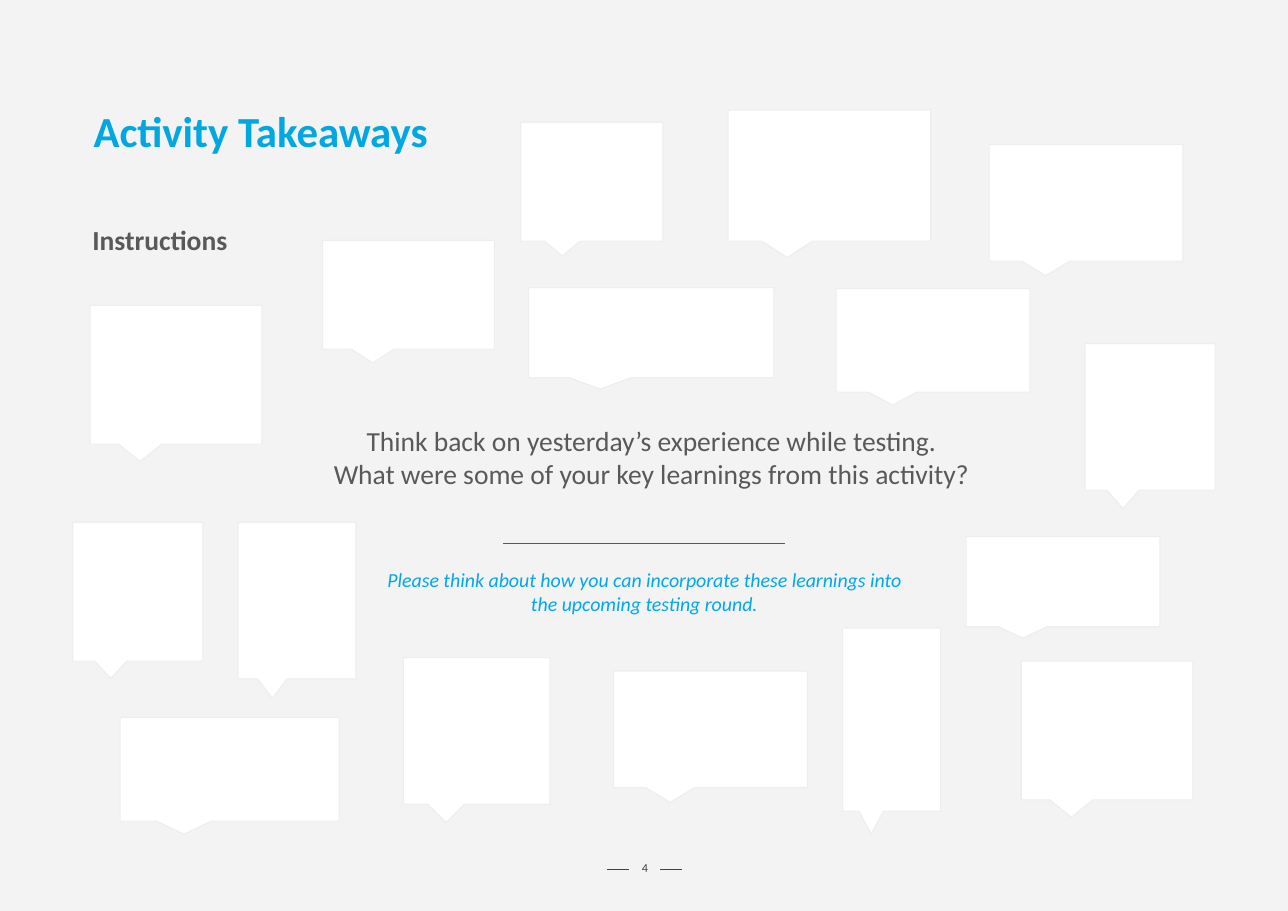
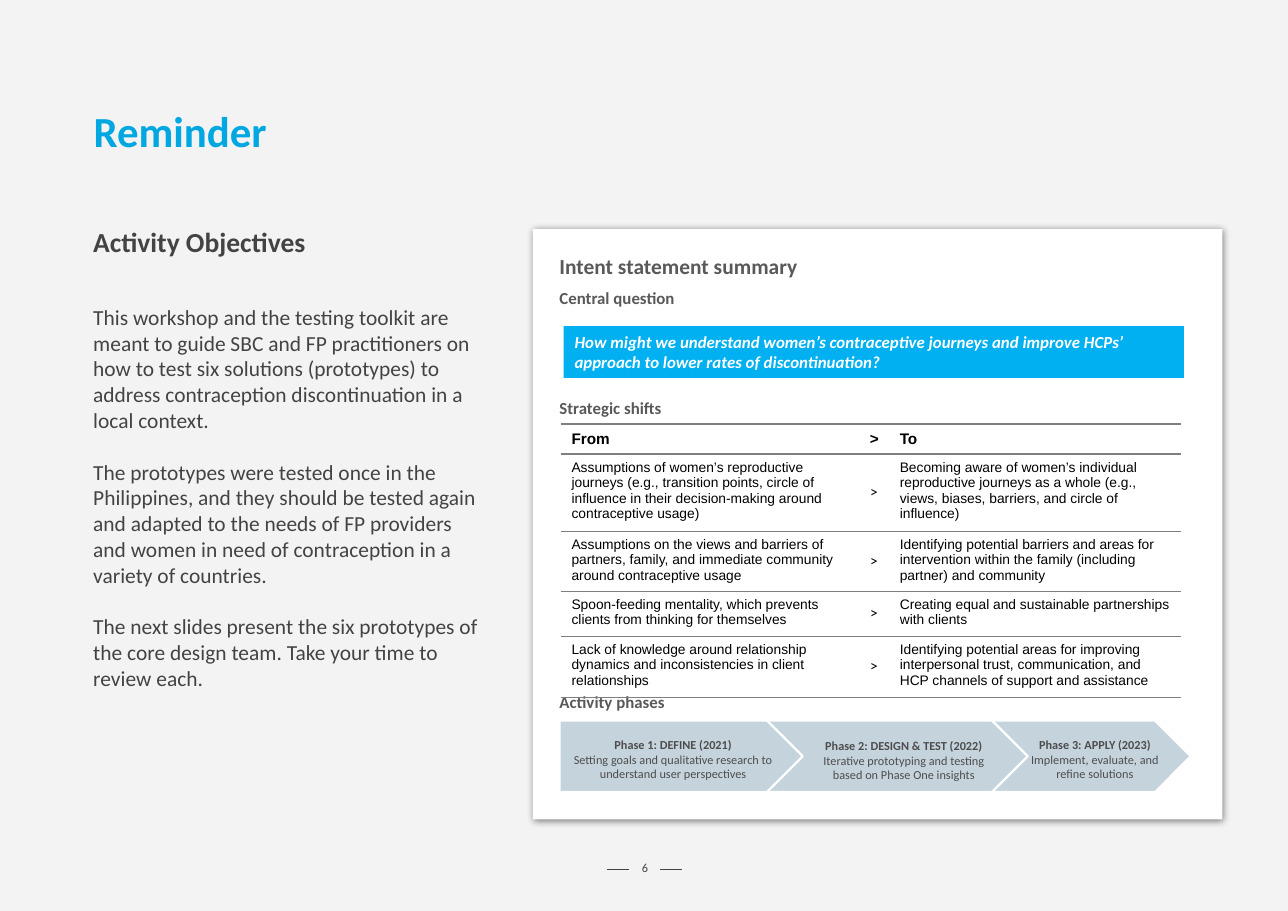
from lxml import etree
from pptx import Presentation
from pptx import util as u
from pptx.dml.color import RGBColor
from pptx.enum import shapes, text
from pptx.oxml import parse_xml
from pptx.oxml.ns import nsdecls, qn

PAPER = RGBColor(0xF3, 0xF3, 0xF3)
WHITE = RGBColor(0xFF, 0xFF, 0xFF)
BLACK = RGBColor(0x00, 0x00, 0x00)
INK = RGBColor(0x43, 0x43, 0x43)
GREY = RGBColor(0x59, 0x59, 0x59)
PHASE_INK = RGBColor(0x4D, 0x4D, 0x4D)
TITLE_BLUE = RGBColor(0x00, 0xA7, 0xE1)
HINT_BLUE = RGBColor(0x00, 0xA7, 0xF1)
BANNER_BLUE = RGBColor(0x00, 0xB0, 0xF0)
PHASE_FILL = RGBColor(0xC5, 0xD3, 0xDC)
CALLOUT_LINE = RGBColor(0xEE, 0xEE, 0xEE)
RULE_GREY = RGBColor(0x7F, 0x7F, 0x7F)

LEFT, CENTER = text.PP_ALIGN.LEFT, text.PP_ALIGN.CENTER
TOP, MIDDLE = text.MSO_ANCHOR.TOP, text.MSO_ANCHOR.MIDDLE
TITLE_ONLY = 5


def write(frame, words, size=11, color=GREY, bold=False, italic=False,
          font="Calibri", align=LEFT, spacing=1.0, before=0):
    """Fill the empty first paragraph of the frame, or add one below."""
    paragraph = frame.add_paragraph() if frame.text else frame.paragraphs[0]
    paragraph.text = words
    paragraph.alignment = align
    paragraph.line_spacing = spacing
    paragraph.space_before = u.Pt(before)
    paragraph.font.name = font
    paragraph.font.size = u.Pt(size)
    paragraph.font.bold = bold
    paragraph.font.italic = italic
    paragraph.font.color.rgb = color


def set_frame(frame, inset=(0.25, 0.25), anchor=TOP):
    frame.word_wrap = True
    frame.auto_size = text.MSO_AUTO_SIZE.NONE
    frame.vertical_anchor = anchor
    frame.margin_left = frame.margin_right = u.Cm(inset[0])
    frame.margin_top = frame.margin_bottom = u.Cm(inset[1])


def set_borders(cell, top, bottom):
    """Rule the cell above and below, in points, with open sides."""
    properties = cell._tc.get_or_add_tcPr()
    for index, (side, width) in enumerate(
            (("L", 0), ("R", 0), ("T", top), ("B", bottom))):
        paint = (f'<a:solidFill><a:srgbClr val="{RULE_GREY}"/></a:solidFill>'
                 if width else "<a:noFill/>")
        properties.insert(index, parse_xml(
            f'<a:ln{side} {nsdecls("a")} w="{u.Pt(width)}">{paint}</a:ln{side}>'))


class Deck:
    """Holds the presentation, its shared style and the current slide."""

    def __init__(self):
        self.presentation = Presentation()
        self.presentation.slide_width = u.Cm(29.7)
        self.presentation.slide_height = u.Cm(21)
        background = self.presentation.slide_master.background.fill
        background.solid()
        background.fore_color.rgb = PAPER

    def add_slide(self, title, number):
        layout = self.presentation.slide_layouts[TITLE_ONLY]
        self.slide = self.presentation.slides.add_slide(layout)
        placeholder = self.slide.shapes.title
        placeholder.left, placeholder.top = u.Cm(1.88), u.Cm(2.11)
        placeholder.width, placeholder.height = u.Cm(21.97), u.Cm(1.96)
        set_frame(placeholder.text_frame, (0.28, 0.15), MIDDLE)
        write(placeholder.text_frame, title, size=28, color=TITLE_BLUE,
              bold=True, spacing=0.86)
        self.add_text((14.43, 19.71, 0.89, 0.66), str(number), anchor=MIDDLE,
                      size=8, color=INK, align=CENTER, spacing=0.8)
        for left in (14, 15.22):
            self.add_line(left, 20.04, 0.51, INK)

    def add_text(self, box, *paragraphs, inset=(0.25, 0.25), anchor=TOP, **style):
        frame = self.slide.shapes.add_textbox(*map(u.Cm, box)).text_frame
        set_frame(frame, inset, anchor)
        for words in paragraphs:
            write(frame, words, **style)
        return frame

    def add_line(self, left, top, width, color):
        line = self.slide.shapes.add_connector(
            shapes.MSO_CONNECTOR.STRAIGHT,
            u.Cm(left), u.Cm(top), u.Cm(left + width), u.Cm(top))
        line.line.color.rgb = color
        line.line.width = u.Pt(0.75)
        etree.SubElement(line._element.spPr, qn("a:effectLst"))

    def add_shape(self, kind, box, fill, outline=None, width=0.75, adjustments=()):
        shape = self.slide.shapes.add_shape(kind, *map(u.Cm, box))
        shape.shadow.inherit = False
        shape.fill.solid()
        shape.fill.fore_color.rgb = fill
        if outline is None:
            shape.line.fill.background()
        else:
            shape.line.color.rgb = outline
            shape.line.width = u.Pt(width)
        for index, value in enumerate(adjustments):
            shape.adjustments[index] = value
        return shape

    def add_callout(self, box):
        self.add_shape(shapes.MSO_SHAPE.ROUNDED_RECTANGULAR_CALLOUT, box, WHITE,
                       CALLOUT_LINE, adjustments=(-0.208, 0.625, 0))

    def add_card(self, box):
        """Add a white panel with a soft shadow."""
        card = self.add_shape(shapes.MSO_SHAPE.RECTANGLE, box, WHITE)
        effects = card._element.spPr.find(qn("a:effectLst"))
        effects.append(parse_xml(
            f'<a:outerShdw {nsdecls("a")} blurRad="{u.Pt(4.5)}" dist="{u.Pt(1.5)}" '
            f'dir="{44 * 60000}" algn="tl" rotWithShape="0"><a:srgbClr val="{BLACK}">'
            '<a:alpha val="49000"/></a:srgbClr></a:outerShdw>'))

    def add_banner(self, box, words):
        banner = self.add_shape(shapes.MSO_SHAPE.RECTANGLE, box, BANNER_BLUE)
        set_frame(banner.text_frame, (0.25, 0.13))
        write(banner.text_frame, words, color=WHITE, bold=True, italic=True)

    def add_phase(self, arrow_box, text_box, name, goal):
        self.add_shape(shapes.MSO_SHAPE.PENTAGON, arrow_box, PHASE_FILL, WHITE, 1.5)
        style = dict(size=8, color=PHASE_INK, align=CENTER)
        frame = self.add_text(text_box, name, inset=(0, 0), bold=True,
                              spacing=1.62, **style)
        write(frame, goal, **style)

    def add_shift_table(self, left, top, widths, heights, shifts):
        rows = [("From", "To"), *shifts]
        table = self.slide.shapes.add_table(
            len(rows), len(widths), u.Cm(left), u.Cm(top),
            u.Cm(sum(widths)), u.Cm(sum(heights))).table
        table.first_row = table.horz_banding = False
        for column, width in zip(table.columns, widths):
            column.width = u.Cm(width)
        for index, (origin, target) in enumerate(rows):
            table.rows[index].height = u.Cm(heights[index])
            header = index == 0
            for column, words in enumerate((origin, ">", target)):
                cell = table.cell(index, column)
                arrow = column == 1
                cell.fill.background()
                cell.margin_left = cell.margin_right = u.Cm(0.25)
                cell.margin_top = cell.margin_bottom = u.Cm(0.13)
                cell.vertical_anchor = MIDDLE if header or arrow else TOP
                set_borders(cell, 1.5 if index < 2 else 0.75,
                            1.5 if header else 0.75)
                write(cell.text_frame, words, size=10 if header or arrow else 9,
                      color=BLACK, bold=header, align=CENTER if arrow else LEFT,
                      font="Calibri" if arrow and not header else "Arial")


CALLOUTS = (
    (2.08, 7.04, 3.96, 3.2), (1.68, 12.04, 3, 3.2),
    (2.77, 16.54, 5.05, 2.39), (5.49, 12.04, 2.72, 3.61),
    (7.44, 5.54, 3.96, 2.51), (12.01, 2.82, 3.28, 2.74),
    (9.3, 15.16, 3.38, 3.38), (16.79, 2.54, 4.67, 3.02),
    (22.81, 3.33, 4.47, 2.69), (14.15, 15.47, 4.47, 2.69),
    (19.43, 14.48, 2.26, 4.22), (12.19, 6.63, 5.66, 2.08),
    (19.28, 6.65, 4.47, 2.39), (22.28, 12.37, 4.47, 2.08),
    (25.02, 7.92, 3, 3.38), (23.55, 15.24, 3.96, 3.2),
)

OBJECTIVES = (
    "This workshop and the testing toolkit are meant to guide SBC and FP "
    "practitioners on how to test six solutions (prototypes) to address "
    "contraception discontinuation in a local context.",
    "The prototypes were tested once in the Philippines, and they should be "
    "tested again and adapted to the needs of FP providers and women in need of "
    "contraception in a variety of countries.",
    "The next slides present the six prototypes of the core design team. Take "
    "your time to review each.",
)

SHIFTS = (
    ("Assumptions of women’s reproductive journeys (e.g., transition points, "
     "circle of influence in their decision-making around contraceptive usage)",
     "Becoming aware of women’s individual reproductive journeys as a whole "
     "(e.g., views, biases, barriers, and circle of influence)"),
    ("Assumptions on the views and barriers of partners, family, and immediate "
     "community around contraceptive usage",
     "Identifying potential barriers and areas for intervention within the "
     "family (including partner) and community"),
    ("Spoon-feeding mentality, which prevents clients from thinking for themselves",
     "Creating equal and sustainable partnerships with clients"),
    ("Lack of knowledge around relationship dynamics and inconsistencies in "
     "client relationships",
     "Identifying potential areas for improving interpersonal trust, "
     "communication, and HCP channels of support and assistance"),
)

# Last phase first, so that each arrow overlaps the one that follows it.
PHASES = (
    ((22.43, 16.61, 5.03, 1.65), (23.75, 16.79, 3, 1.63),
     "Phase 3: APPLY (2023)", "Implement, evaluate, and refine solutions"),
    ((17.68, 16.61, 6.02, 1.65), (18.75, 16.81, 4.19, 0.97),
     "Phase 2: DESIGN & TEST (2022)",
     "Iterative prototyping and testing based on Phase One insights"),
    ((12.9, 16.61, 5.61, 1.65), (13.11, 16.79, 4.83, 1.14),
     "Phase 1: DEFINE (2021)",
     "Setting goals and qualitative research to understand user perspectives"),
)


def build_takeaways(deck):
    deck.add_slide("Activity Takeaways", 4)
    deck.add_text((6.12, 9.5, 17.81, 2.13),
                  "Think back on yesterday’s experience while testing.",
                  "What were some of your key learnings from this activity?",
                  inset=(0.28, 0.28), size=18, align=CENTER)
    deck.add_text((8.43, 12.8, 12.85, 1.7),
                  "Please think about how you can incorporate these learnings "
                  "into the upcoming testing round.",
                  inset=(0.28, 0.28), size=13, color=HINT_BLUE, italic=True,
                  align=CENTER)
    deck.add_line(11.61, 12.52, 6.48, GREY)
    deck.add_text((1.88, 4.9, 15.24, 1.32), "Instructions", size=18, bold=True)
    for box in CALLOUTS:
        deck.add_callout(box)


def build_reminder(deck):
    deck.add_slide("Reminder", 6)
    deck.add_text((1.9, 4.93, 10, 1.32), "Activity Objectives",
                  size=18, color=INK, bold=True)
    deck.add_text((1.9, 6.76, 9.63, 10.03), *OBJECTIVES,
                  size=14, color=INK, before=17)
    deck.add_card((12.29, 5.28, 15.9, 13.61))
    for top, size, heading in ((5.61, 14, "Intent statement summary"),
                               (6.4, 11, "Central question"),
                               (8.94, 11, "Strategic shifts"),
                               (15.72, 11, "Activity phases")):
        deck.add_text((12.67, top, 7.57, 0.84), heading, inset=(0.23, 0.23),
                      size=size, bold=True)
    deck.add_banner((13, 7.52, 14.3, 1.19),
                    "How might we understand women’s contraceptive journeys and "
                    "improve HCPs’ approach to lower rates of discontinuation?")
    for phase in PHASES:
        deck.add_phase(*phase)
    deck.add_shift_table(12.93, 9.78, (6.88, 0.69, 6.73),
                         (0.69, 1.78, 1.38, 1.04, 1.4), SHIFTS)


def main():
    deck = Deck()
    build_takeaways(deck)
    build_reminder(deck)
    deck.presentation.save("out.pptx")


if __name__ == "__main__":
    main()
